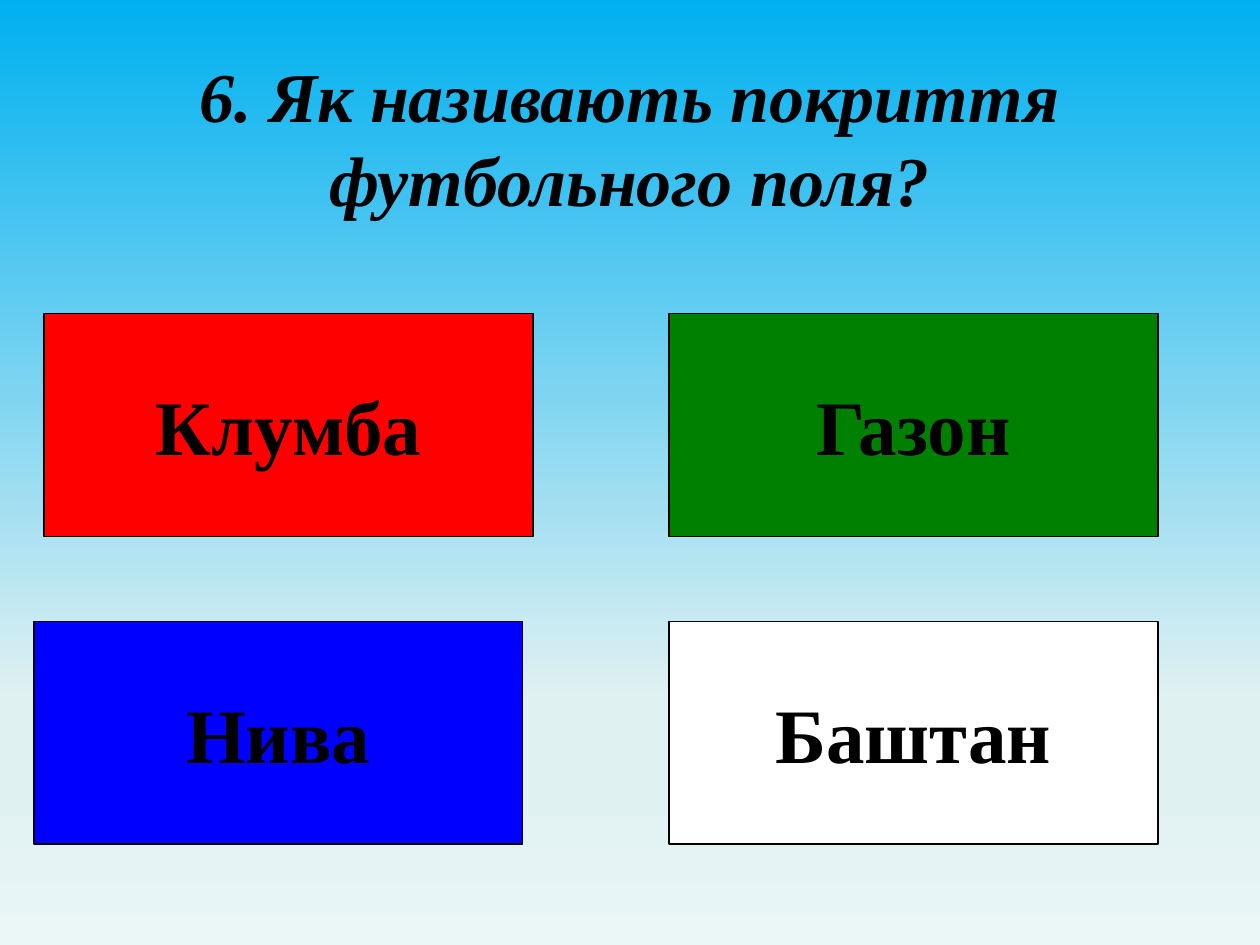
from lxml.etree import SubElement
from pptx import Presentation
from pptx.dml.color import RGBColor
from pptx.enum.shapes import MSO_SHAPE as Form
from pptx.enum.text import MSO_ANCHOR as Anchor, PP_ALIGN as Align
from pptx.oxml.ns import qn
from pptx.util import Pt


def color(code):
    return RGBColor.from_string(code)


class Quiz:
    """Draws the parts of a quiz slide in one style."""

    font = "Times New Roman"
    ink = "000000"

    def __init__(self, slide):
        self.slide = slide

    def sky(self, stops):
        fill = self.slide.background.fill
        fill.gradient()
        fill.gradient_angle = 270
        ramp = next(self.slide.element.iter(qn("a:gsLst")))
        for stop in list(ramp):
            ramp.remove(stop)
        for place, code in stops:
            stop = SubElement(ramp, qn("a:gs"), pos=str(place * 1000))
            SubElement(stop, qn("a:srgbClr"), val=code)

    def label(self, shape, text, size, wrap, slant=False):
        frame = shape.text_frame
        frame.text = text
        frame.word_wrap = wrap
        frame.vertical_anchor = Anchor.MIDDLE
        line = frame.paragraphs[0]
        line.alignment = Align.CENTER
        font = line.runs[0].font
        font.name, font.size = self.font, Pt(size)
        font.bold, font.italic = True, slant
        font.color.rgb = color(self.ink)

    def title(self, text, *area):
        box = self.slide.shapes.add_textbox(*map(Pt, area))
        self.label(box, text, 40, True, slant=True)

    def answer(self, text, code, *area):
        box = self.slide.shapes.add_shape(Form.RECTANGLE, *map(Pt, area))
        box.shadow.inherit = False
        box.fill.solid()
        box.fill.fore_color.rgb = color(code)
        box.line.color.rgb = color(self.ink)
        box.line.width = Pt(0.75)
        self.label(box, text, 44, False)


def main():
    deck = Presentation()
    deck.slide_width, deck.slide_height = Pt(720), Pt(540)
    quiz = Quiz(deck.slides.add_slide(deck.slide_layouts[6]))
    quiz.sky([(0, "00B0F0"), (74, "E0F1F2"), (83, "E0F1F2"), (100, "EBF6F7")])
    quiz.title("6. Як називають покриття футбольного поля?", 36, 21.6, 647.3, 112.3)
    wide, high = 279.4, 127.4
    top, low, right = 179.3, 355, 382.3
    for text, code, x, y in [
        ("Клумба", "FF0000", 25.2, top),
        ("Газон", "008000", right, top),
        ("Нива", "0000FF", 19.4, low),
        ("Баштан", "FFFFFF", right, low),
    ]:
        quiz.answer(text, code, x, y, wide, high)
    deck.save("out.pptx")


if __name__ == "__main__":
    main()
